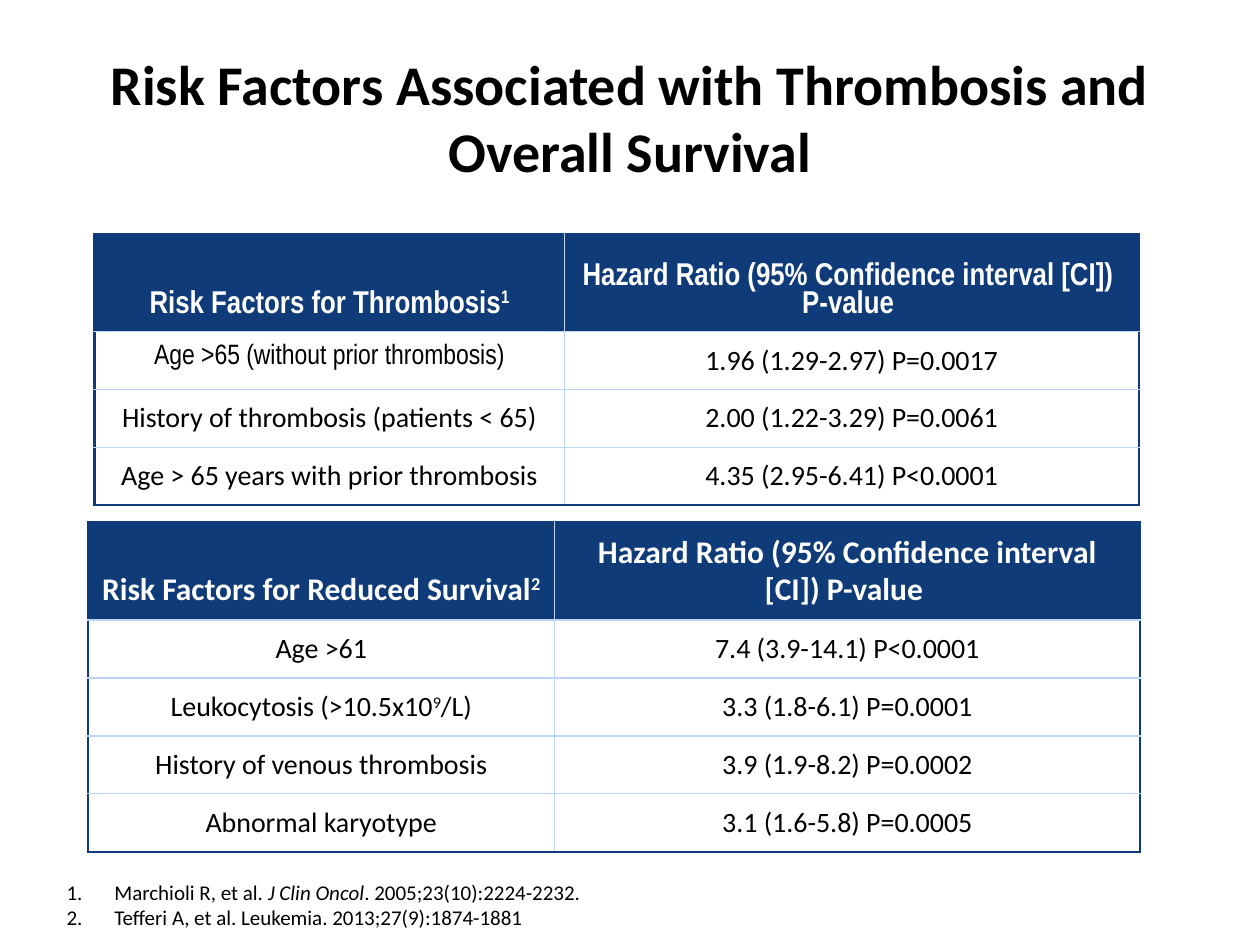
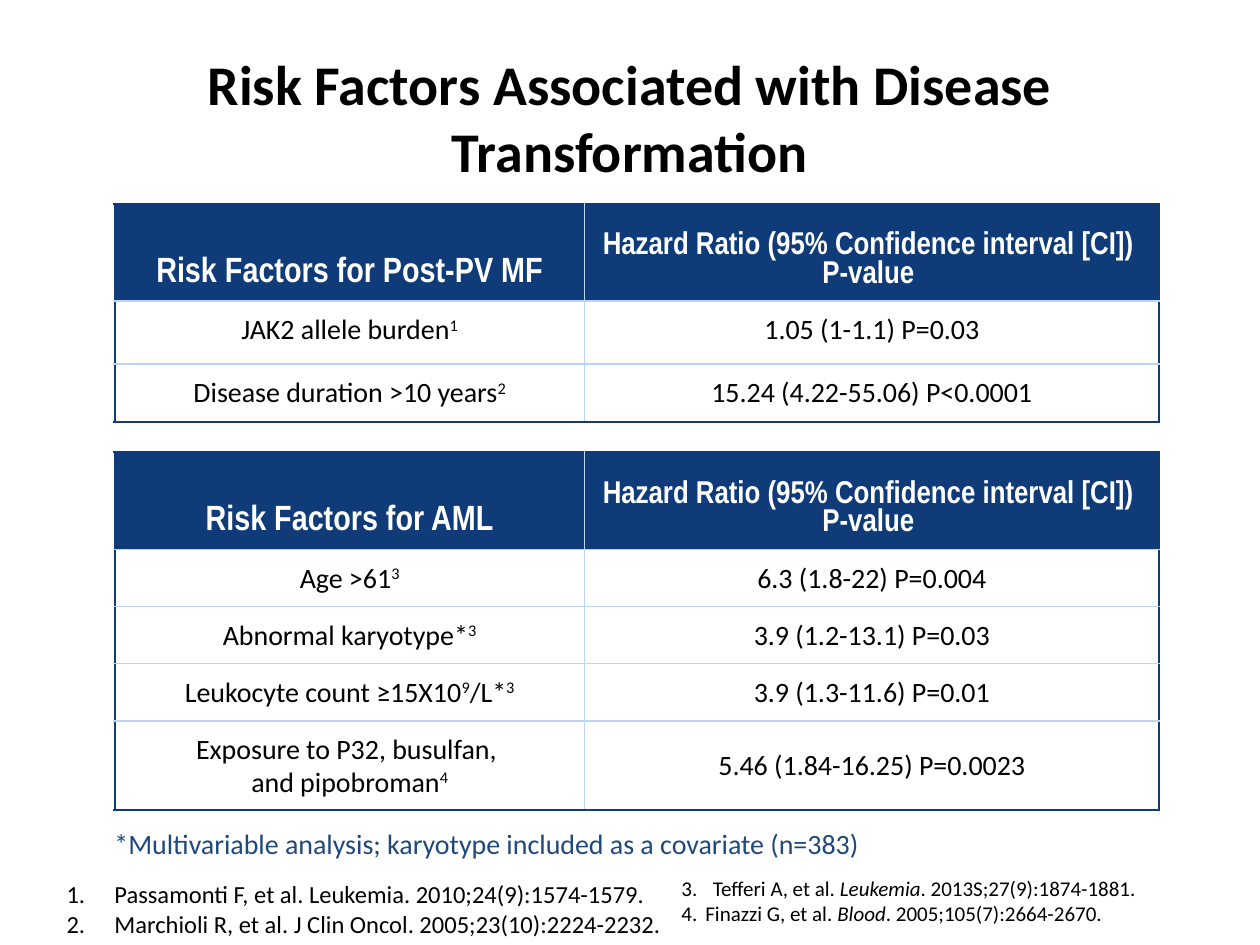
from lxml.etree import SubElement
from pptx import Presentation
from pptx.dml.color import RGBColor
from pptx.enum.text import MSO_ANCHOR as Anchor, MSO_AUTO_SIZE as AutoSize, PP_ALIGN as Align
from pptx.oxml.ns import qn
from pptx.util import Pt

EMU_PER_PX = 9144
NAVY, PALE_BLUE, NOTE_BLUE = "0F3B79", "BCD5F7", "1F497D"
WHITE, BLACK = "FFFFFF", "000000"
BODY_FONT, NARROW_FONT = "Calibri", "Arial Narrow"
HAZARD_RATIO = "Hazard Ratio (95% Confidence interval [CI]) \nP-value "


def px(length):
    return length * EMU_PER_PX


def color(hex_code):
    return RGBColor.from_string(hex_code)


class Deck:
    """Holds the shared style and the current slide; ^x^ marks superscript and _x_ italic."""

    def __init__(self):
        self.presentation = Presentation()
        self.presentation.slide_width = px(1000)
        self.presentation.slide_height = px(750)
        self.slide = None

    def new_slide(self, title):
        self.slide = self.presentation.slides.add_slide(self.presentation.slide_layouts[6])
        frame = self.text_box(50, 30, 900, 125)
        frame.vertical_anchor = Anchor.MIDDLE
        paragraph = frame.paragraphs[0]
        paragraph.alignment = Align.CENTER
        self.add_runs(paragraph, title, 32, bold=True)

    def text_box(self, left, top, width, height):
        frame = self.slide.shapes.add_textbox(px(left), px(top), px(width), px(height)).text_frame
        frame.word_wrap = True
        return frame

    def add_runs(self, paragraph, text, size, font=BODY_FONT, ink=BLACK, bold=False):
        for script_index, script_part in enumerate(text.split("^")):
            for italic_index, part in enumerate(script_part.split("_")):
                for line_index, line in enumerate(part.split("\n")):
                    if line_index:
                        paragraph.add_line_break()
                    if not line:
                        continue
                    run = paragraph.add_run()
                    run.text = line
                    run.font.name = font
                    run.font.size = Pt(size)
                    run.font.bold = bold
                    run.font.italic = italic_index % 2 == 1
                    run.font.color.rgb = color(ink)
                    if script_index % 2:
                        run._r.get_or_add_rPr().set("baseline", "30000")

    def note(self, text, left, top, width, height):
        frame = self.text_box(left, top, width, height)
        frame.auto_size = AutoSize.SHAPE_TO_FIT_TEXT
        self.add_runs(frame.paragraphs[0], text, 16, ink=NOTE_BLUE)

    def references(self, box, entries, size, indents, start=1):
        frame = self.text_box(*box)
        frame.auto_size = AutoSize.SHAPE_TO_FIT_TEXT
        for index, (entry, indent) in enumerate(zip(entries, indents)):
            paragraph = frame.add_paragraph() if index else frame.paragraphs[0]
            properties = paragraph._p.get_or_add_pPr()
            properties.set("marL", str(px(indent)))
            properties.set("indent", str(-px(indent)))
            number = SubElement(properties, qn("a:buAutoNum"), type="arabicPeriod")
            if start > 1:
                number.set("startAt", str(start))
            self.add_runs(paragraph, entry, size)

    def border(self, cell, side, outer):
        line = SubElement(cell._tc.get_or_add_tcPr(), qn(f"a:ln{side}"),
                          w=str(int(Pt(1.5 if outer else 1))))
        fill = SubElement(line, qn("a:solidFill"))
        SubElement(fill, qn("a:srgbClr"), val=NAVY if outer else PALE_BLUE)

    def cell(self, cell, text, edges, fill, anchor, **style):
        for side, outer in edges.items():
            self.border(cell, side, outer)
        cell.fill.solid()
        cell.fill.fore_color.rgb = color(fill)
        cell.vertical_anchor = anchor
        cell.margin_left = cell.margin_right = cell.margin_top = cell.margin_bottom = px(10)
        paragraph = cell.text_frame.paragraphs[0]
        paragraph.alignment = Align.CENTER
        paragraph.line_spacing = 0.95
        self.add_runs(paragraph, text, **style)

    def risk_table(self, left, top, columns, heights, rows, header_font=NARROW_FONT,
                   factor_size=18, anchor=Anchor.TOP, narrow_cells=()):
        table = self.slide.shapes.add_table(len(rows), len(columns), px(left), px(top),
                                            px(sum(columns)), px(sum(heights))).table
        table.horz_banding = False
        for column, width in zip(table.columns, columns):
            column.width = px(width)
        for r, (height, texts) in enumerate(zip(heights, rows)):
            table.rows[r].height = px(height)
            for c, text in enumerate(texts):
                edges = {"L": c == 0, "R": c == len(columns) - 1,
                         "T": r == 0, "B": r == len(rows) - 1}
                if r == 0:
                    self.cell(table.cell(r, c), text, edges, NAVY, Anchor.BOTTOM,
                              size=18 if c else factor_size, font=header_font,
                              ink=WHITE, bold=True)
                else:
                    font = NARROW_FONT if (r, c) in narrow_cells else BODY_FONT
                    self.cell(table.cell(r, c), text, edges, WHITE, anchor, size=16, font=font)


def thrombosis_slide(deck):
    deck.new_slide("Risk Factors Associated with Thrombosis and Overall Survival")
    deck.risk_table(75, 186, [373, 456], [65] + [46] * 3, [
        ("Risk Factors for Thrombosis^1^", HAZARD_RATIO),
        ("Age >65 (without prior thrombosis)", "1.96 (1.29-2.97) P=0.0017"),
        ("History of thrombosis (patients < 65)", "2.00 (1.22-3.29) P=0.0061"),
        ("Age > 65 years with prior thrombosis", "4.35 (2.95-6.41) P<0.0001"),
    ], narrow_cells=[(1, 0)])
    deck.risk_table(70, 414, [370, 465], [78] + [46] * 4, [
        ("Risk Factors for Reduced Survival^2^", HAZARD_RATIO.replace("\n", "")),
        ("Age >61", "7.4 (3.9-14.1) P<0.0001"),
        ("Leukocytosis (>10.5x10^9^/L)", "3.3 (1.8-6.1) P=0.0001"),
        ("History of venous thrombosis", "3.9 (1.9-8.2) P=0.0002"),
        ("Abnormal karyotype", "3.1 (1.6-5.8) P=0.0005"),
    ], header_font=BODY_FONT)
    deck.references((43, 693, 787, 50), [
        "Marchioli R, et al. _J Clin Oncol_. 2005;23(10):2224-2232.",
        "Tefferi A, et al. Leukemia. 2013;27(9):1874-1881",
    ], 12, [38, 38])


def transformation_slide(deck):
    deck.new_slide("Risk Factors Associated with Disease Transformation")
    deck.references((43, 693, 787, 57), [
        "Passamonti F, et al. Leukemia. 2010;24(9):1574-1579.",
        "Marchioli R, et al. J Clin Oncol. 2005;23(10):2224-2232.",
    ], 14, [38, 38])
    deck.risk_table(91, 162, [373, 456], [77, 50, 46], [
        ("Risk Factors for Post-PV MF", HAZARD_RATIO),
        ("JAK2 allele burden^1^", "1.05 (1-1.1) P=0.03"),
        ("Disease duration >10 years^2^", "15.24 (4.22-55.06) P<0.0001"),
    ], factor_size=20)
    deck.risk_table(91, 359, [373, 456], [76, 45, 45, 45, 71], [
        ("Risk Factors for AML", HAZARD_RATIO),
        ("Age >61^3^", "6.3 (1.8-22) P=0.004"),
        ("Abnormal karyotype*^3^", "3.9 (1.2-13.1) P=0.03"),
        ("Leukocyte count ≥15X10^9^/L*^3^", "3.9 (1.3-11.6) P=0.01"),
        ("Exposure to P32, busulfan, \nand pipobroman^4^", "5.46 (1.84-16.25) P=0.0023"),
    ], factor_size=20, anchor=Anchor.MIDDLE)
    deck.references((531, 690, 417, 50), [
        "Tefferi A, et al. _Leukemia_. 2013S;27(9):1874-1881.",
        "Finazzi G, et al. _Blood_. 2005;105(7):2664-2670.",
    ], 12, [25, 19], start=3)
    deck.note("*Multivariable analysis; karyotype included as a covariate (n=383)", 81, 651, 902, 37)


def main():
    deck = Deck()
    thrombosis_slide(deck)
    transformation_slide(deck)
    deck.presentation.save("out.pptx")


if __name__ == "__main__":
    main()
